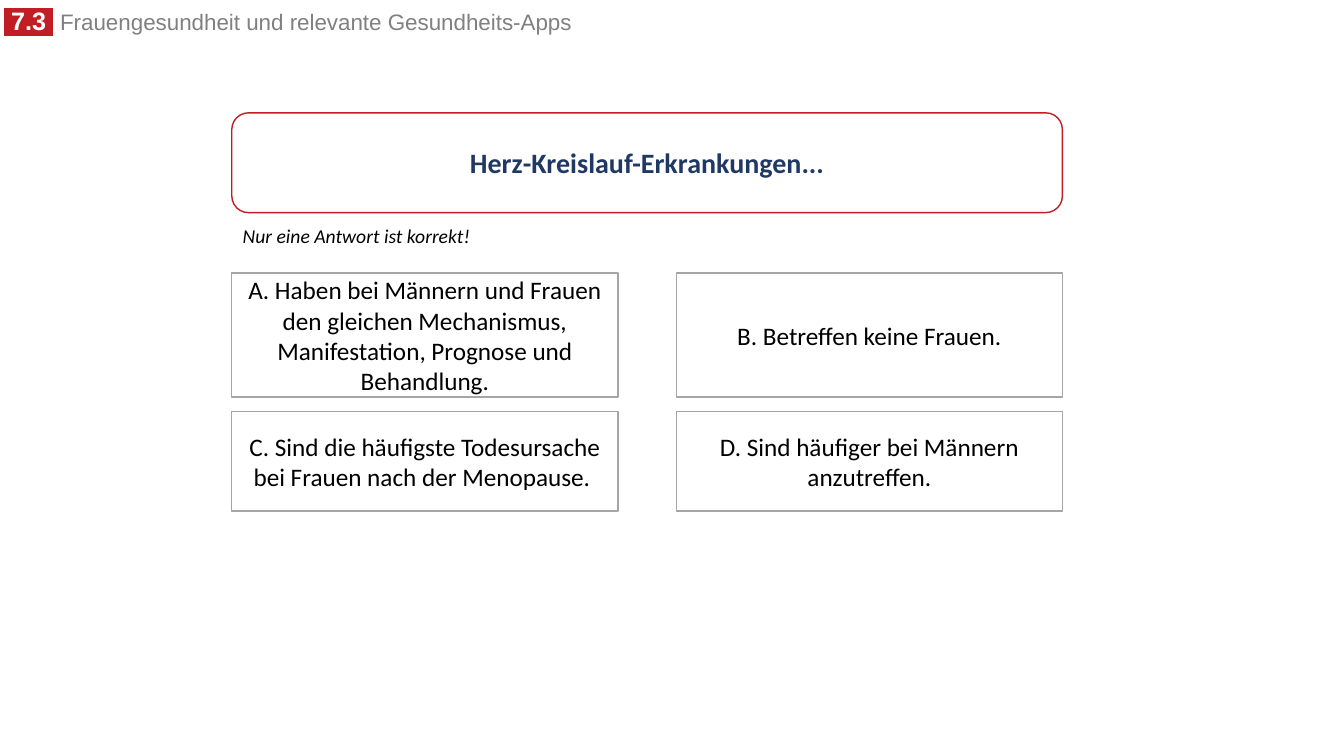
from lxml import etree
from pptx import Presentation
from pptx import util as u
from pptx.dml.color import RGBColor
from pptx.enum import shapes, text
from pptx.oxml.ns import qn

RED = RGBColor(0xC0, 0x1E, 0x24)
NAVY = RGBColor(0x20, 0x38, 0x64)
GRAY = RGBColor(0x80, 0x80, 0x80)
BORDER = RGBColor(0xA5, 0xA5, 0xA5)
WHITE = RGBColor(0xFF, 0xFF, 0xFF)
BLACK = RGBColor(0, 0, 0)

BADGE = {"name": "Arial", "size": u.Pt(18), "bold": True}
GAP = {"name": "Arial", "size": u.Pt(18), "bold": False}
HEADING = {"name": "Arial", "size": u.Pt(16), "bold": False}
QUESTION = {"name": "Calibri", "size": u.Pt(20), "bold": True}
HINT = {"name": "Calibri", "size": u.Pt(14), "italic": True}
ANSWER = {"name": "Calibri", "size": u.Pt(18)}

LEFT, WIDTH = 165.6, 593.3
ANSWER_WIDTH = 275.8
COLUMNS = (LEFT, LEFT + WIDTH - ANSWER_WIDTH)
ROWS = ((195.1, 88.6), (293.8, 71.3))
ANSWERS = (
    ("A. Haben bei Männern und Frauen den gleichen Mechanismus, "
     "Manifestation, Prognose und Behandlung.",
     "B. Betreffen keine Frauen."),
    ("C. Sind die häufigste Todesursache bei Frauen nach der Menopause. ",
     "D. Sind häufiger bei Männern anzutreffen."),
)


def set_values(target, values):
    for name, value in values.items():
        setattr(target, name, value)


def add_span(para, words, values, color):
    span = para.add_run()
    span.text = words
    set_values(span.font, values)
    span.font.color.rgb = color
    return span


def highlight(span, color):
    fill = span.font._element.find(qn("a:solidFill"))
    mark = etree.Element(qn("a:highlight"))
    etree.SubElement(mark, qn("a:srgbClr"), val=str(color))
    fill.addnext(mark)


def fill_header(title):
    set_values(title, {"left": u.Pt(-4.3), "top": u.Pt(4.3),
                       "width": u.Pt(493.9), "height": u.Pt(25.2)})
    set_values(title.text_frame, {
        "word_wrap": True,
        "vertical_anchor": text.MSO_ANCHOR.TOP,
        "auto_size": text.MSO_AUTO_SIZE.SHAPE_TO_FIT_TEXT})
    para = title.text_frame.paragraphs[0]
    set_values(para, {"alignment": text.PP_ALIGN.LEFT, "line_spacing": 0.8})
    highlight(add_span(para, " 7.3 ", BADGE, WHITE), RED)
    add_span(para, " ", GAP, GRAY)
    add_span(para, "Frauengesundheit und relevante Gesundheits-Apps",
             HEADING, GRAY)


def add_box(page, kind, frame, words, values, color, border):
    box = page.shapes.add_shape(kind, *map(u.Pt, frame))
    box.shadow.inherit = False
    box.fill.solid()
    box.fill.fore_color.rgb = WHITE
    box.line.color.rgb = border
    box.line.width = u.Pt(1)
    set_values(box.text_frame, {"word_wrap": True,
                                "vertical_anchor": text.MSO_ANCHOR.MIDDLE})
    para = box.text_frame.paragraphs[0]
    para.alignment = text.PP_ALIGN.CENTER
    add_span(para, words, values, color)


def add_hint(page, frame, words):
    box = page.shapes.add_textbox(*map(u.Pt, frame))
    set_values(box.text_frame, {
        "word_wrap": False,
        "auto_size": text.MSO_AUTO_SIZE.SHAPE_TO_FIT_TEXT})
    add_span(box.text_frame.paragraphs[0], words, HINT, BLACK)


def main():
    deck = Presentation()
    set_values(deck, {"slide_width": u.Pt(960), "slide_height": u.Pt(540)})
    page = deck.slides.add_slide(deck.slide_layouts.get_by_name("Title Only"))
    fill_header(page.shapes.title)
    add_box(page, shapes.MSO_SHAPE.ROUNDED_RECTANGLE,
            (LEFT, 80.6, WIDTH, 71.3), "Herz-Kreislauf-Erkrankungen...",
            QUESTION, NAVY, RED)
    add_hint(page, (166.3, 156.2, 177.8, 24.5),
             "Nur eine Antwort ist korrekt!")
    for (top, height), answers in zip(ROWS, ANSWERS):
        for left, answer in zip(COLUMNS, answers):
            add_box(page, shapes.MSO_SHAPE.RECTANGLE,
                    (left, top, ANSWER_WIDTH, height),
                    answer, ANSWER, BLACK, BORDER)
    deck.save("out.pptx")


if __name__ == "__main__":
    main()
